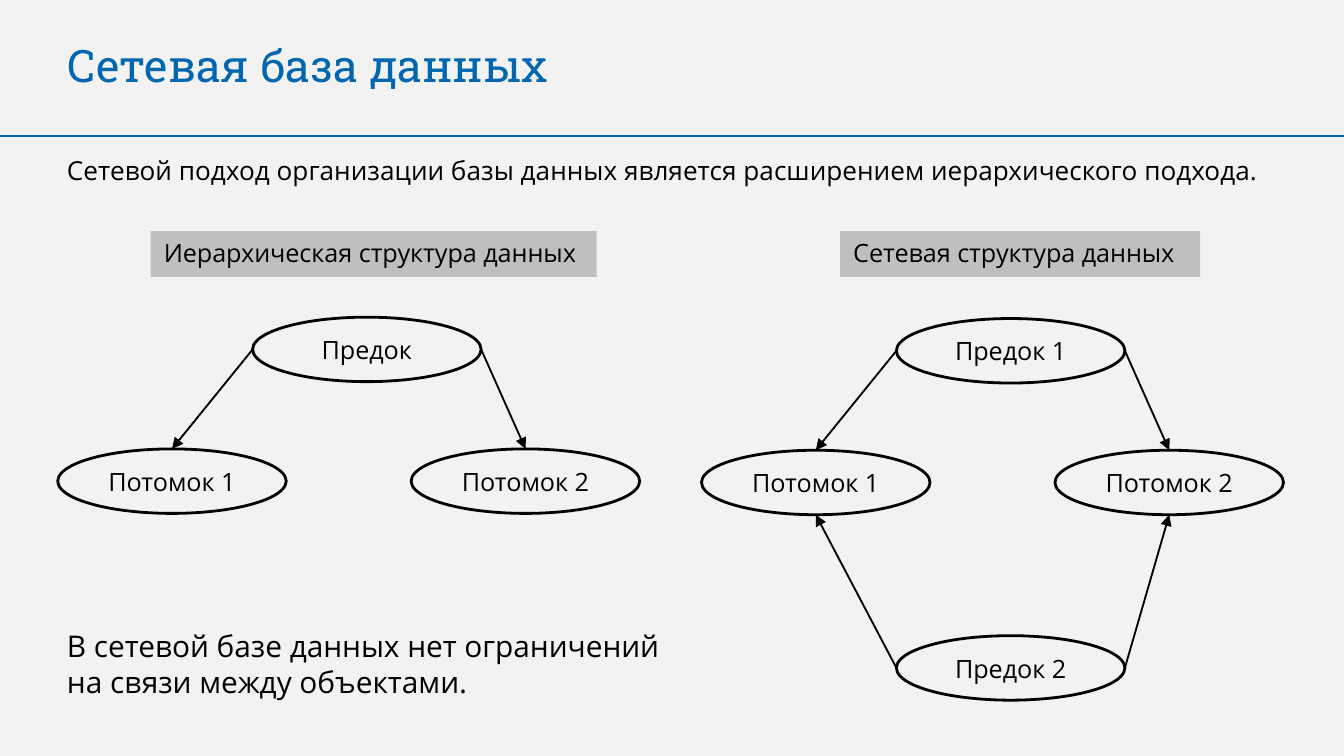
import pptx
import pptx.util
import pptx.dml.color
import pptx.enum.shapes
import pptx.enum.text
import pptx.oxml
import pptx.oxml.ns

Inches = pptx.util.Inches
SHAPE = pptx.enum.shapes.MSO_SHAPE
ALIGN = pptx.enum.text.PP_ALIGN
ANCHOR = pptx.enum.text.MSO_ANCHOR

# Content
TITLE = ("Сетевая база данных", (0.4, 0.23, 5.14, 0.5))
STATEMENTS = [
    ("Сетевой подход организации базы данных является расширением иерархического подхода.",
     (0.4, 1.1, 9.2, 0.34), "intro"),
    ("В сетевой базе данных нет ограничений на связи между объектами.",
     (0.4, 4.62, 4.72, 0.64), "conclusion"),
]
CHILDREN = ["Потомок 1", "Потомок 2"]
# Each structure: heading and its box, left and top of the diagram, parents above and below
STRUCTURES = [
    {"heading": "Иерархическая структура данных", "box": (1.12, 1.72, 3.32, 0.34),
     "origin": (0.43, 2.36), "above": "Предок", "below": None},
    {"heading": "Сетевая структура данных", "box": (6.25, 1.72, 2.68, 0.34),
     "origin": (5.22, 2.37), "above": "Предок 1", "below": "Предок 2"},
]

# Theme and diagram measures
THEME = {
    "background": "F2F2F2", "accent": "0066B0", "ink": "000000", "heading_fill": "BFBFBF",
    "title": ("Roboto Slab", 24), "intro": ("Open Sans", 14),
    "conclusion": ("Open Sans", 16), "label": ("Open Sans", 13.5),
    "rule_width": 1, "node_width": 1.5,
}
SLIDE_W, RATIO = 10, 9 / 16
NODE_W, NODE_H = 1.7, 0.48
PARENT_DX, CHILD_STEP = 1.45, 2.63
CHILD_DY, BELOW_DY = 0.98, 2.36


def color(name):
    return pptx.dml.color.RGBColor.from_string(THEME[name])


def write(shape, text, style, ink="ink", align=ALIGN.LEFT, anchor=ANCHOR.TOP):
    frame = shape.text_frame
    frame.text = text
    frame_format = {"word_wrap": True, "vertical_anchor": anchor,
                    "auto_size": pptx.enum.text.MSO_AUTO_SIZE.NONE,
                    "margin_left": Inches(0.1), "margin_right": Inches(0.1),
                    "margin_top": Inches(0.05), "margin_bottom": Inches(0.05)}
    for key, value in frame_format.items():
        setattr(frame, key, value)
    paragraph = frame.paragraphs[0]
    paragraph.alignment = align
    face, size = THEME[style]
    for key, value in {"name": face, "size": pptx.util.Pt(size)}.items():
        setattr(paragraph.runs[0].font, key, value)
    paragraph.runs[0].font.color.rgb = color(ink)


def add_line(slide, start, end, ink="ink", arrow=False):
    line = slide.shapes.add_connector(pptx.enum.shapes.MSO_CONNECTOR.STRAIGHT,
                                      *map(Inches, start + end))
    line.line.color.rgb = color(ink)
    line.line.width = pptx.util.Pt(THEME["rule_width"])
    if arrow:
        head = pptx.oxml.parse_xml(
            f'<a:tailEnd {pptx.oxml.ns.nsdecls("a")} type="triangle"/>')
        line.line._get_or_add_ln().append(head)
    line._element.spPr.append(
        pptx.oxml.parse_xml(f'<a:effectLst {pptx.oxml.ns.nsdecls("a")}/>'))


def add_node(slide, text, left, top):
    node = slide.shapes.add_shape(SHAPE.OVAL, *map(Inches, (left, top, NODE_W, NODE_H)))
    node.shadow.inherit = False
    node.fill.background()
    node.line.color.rgb = color("ink")
    node.line.width = pptx.util.Pt(THEME["node_width"])
    write(node, text, "label", align=ALIGN.CENTER, anchor=ANCHOR.MIDDLE)


def add_structure(slide, structure):
    # Heading
    heading = slide.shapes.add_shape(SHAPE.RECTANGLE, *map(Inches, structure["box"]))
    heading.shadow.inherit = False
    heading.fill.solid()
    heading.fill.fore_color.rgb = color("heading_fill")
    heading.line.fill.background()
    write(heading, structure["heading"], "label")

    # Children in one row
    left, top = structure["origin"]
    child_top = top + CHILD_DY
    child_lefts = [left + i * CHILD_STEP for i in range(len(CHILDREN))]
    for child, child_left in zip(CHILDREN, child_lefts):
        add_node(slide, child, child_left, child_top)

    # Parents, each with an arrow from either side to the facing edge of a child
    parent_left = left + PARENT_DX
    parents = [(structure["above"], top, child_top),
               (structure["below"], top + BELOW_DY, child_top + NODE_H)]
    for parent, parent_top, target_y in parents:
        if parent is None:
            continue
        add_node(slide, parent, parent_left, parent_top)
        for side_x, child_left in zip((parent_left, parent_left + NODE_W), child_lefts):
            add_line(slide, (side_x, parent_top + NODE_H / 2),
                     (child_left + NODE_W / 2, target_y), arrow=True)


def main():
    deck = pptx.Presentation()
    deck.slide_width, deck.slide_height = Inches(SLIDE_W), Inches(SLIDE_W * RATIO)
    slide = deck.slides.add_slide(deck.slide_layouts.get_by_name("Title Only"))
    slide.background.fill.solid()
    slide.background.fill.fore_color.rgb = color("background")

    # Title and rule
    title_text, title_box = TITLE
    title = slide.shapes.title
    for key, value in zip(("left", "top", "width", "height"), title_box):
        setattr(title, key, Inches(value))
    write(title, title_text, "title", ink="accent")
    add_line(slide, (0, 1.01), (SLIDE_W, 1.01), ink="accent")

    # Statements
    for text, box, style in STATEMENTS:
        write(slide.shapes.add_textbox(*map(Inches, box)), text, style)

    # Diagrams
    for structure in STRUCTURES:
        add_structure(slide, structure)

    deck.save("out.pptx")


if __name__ == "__main__":
    main()
